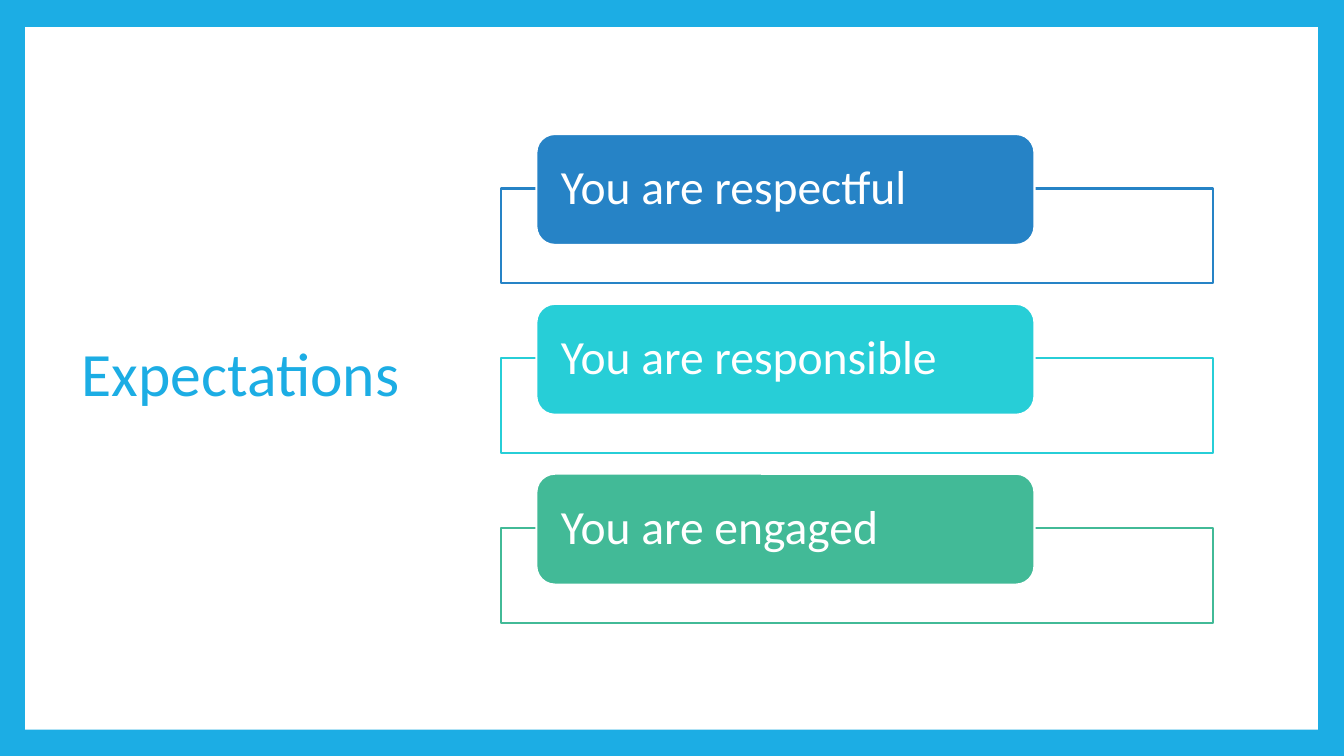
from pptx import Presentation
from pptx.dml.color import RGBColor
from pptx.enum.shapes import MSO_SHAPE
from pptx.enum.text import MSO_ANCHOR, PP_ALIGN
from pptx.util import Inches, Pt

RECT = MSO_SHAPE.RECTANGLE
ROUND_RECT = MSO_SHAPE.ROUNDED_RECTANGLE
MIDDLE = MSO_ANCHOR.MIDDLE
LEFT = PP_ALIGN.LEFT
BLUE = "1CADE4"
WHITE = "FFFFFF"


def add_box(kind, x, y, w, h, fill, line=None):
    sp = s.shapes.add_shape(kind, Inches(x), Inches(y), Inches(w), Inches(h))
    sp.shadow.inherit = False
    sp.fill.solid()
    sp.fill.fore_color.rgb = RGBColor.from_string(fill)
    if line:
        sp.line.color.rgb = RGBColor.from_string(line)
        sp.line.width = Pt(1.5)
    else:
        sp.line.fill.background()
    return sp


def set_text(sp, text, size, color, inset_x=0.1, inset_y=0.05):
    tf = sp.text_frame
    tf.word_wrap = True
    tf.vertical_anchor = MIDDLE
    tf.margin_left = tf.margin_right = Inches(inset_x)
    tf.margin_top = tf.margin_bottom = Inches(inset_y)
    p = tf.paragraphs[0]
    p.alignment = LEFT
    p.line_spacing = 0.9
    r = p.add_run()
    r.text = text
    r.font.name = "Calibri"
    r.font.size = Pt(size)
    r.font.color.rgb = RGBColor.from_string(color)


prs = Presentation()
prs.slide_width = Inches(13.33)
prs.slide_height = Inches(7.5)
s = prs.slides.add_slide(prs.slide_layouts[6])
s.background.fill.solid()
s.background.fill.fore_color.rgb = RGBColor.from_string(BLUE)

add_box(RECT, 0.25, 0.27, 12.82, 6.97, WHITE)

title = s.shapes.add_textbox(Inches(0.71), Inches(0.67), Inches(3.68), Inches(6.13))
set_text(title, "Expectations", 44, BLUE)

expectations = [
    ("You are respectful", "2683C6"),
    ("You are responsible", "27CED7"),
    ("You are engaged", "42BA97"),
]
for i, (text, color) in enumerate(expectations):
    top = 1.33 + i * 1.685
    add_box(RECT, 4.97, top + 0.54, 7.06, 0.94, WHITE, color)
    label = add_box(ROUND_RECT, 5.32, top, 4.94, 1.1, color, WHITE)
    set_text(label, text, 34, WHITE, 0.19, 0)

prs.save("out.pptx")
